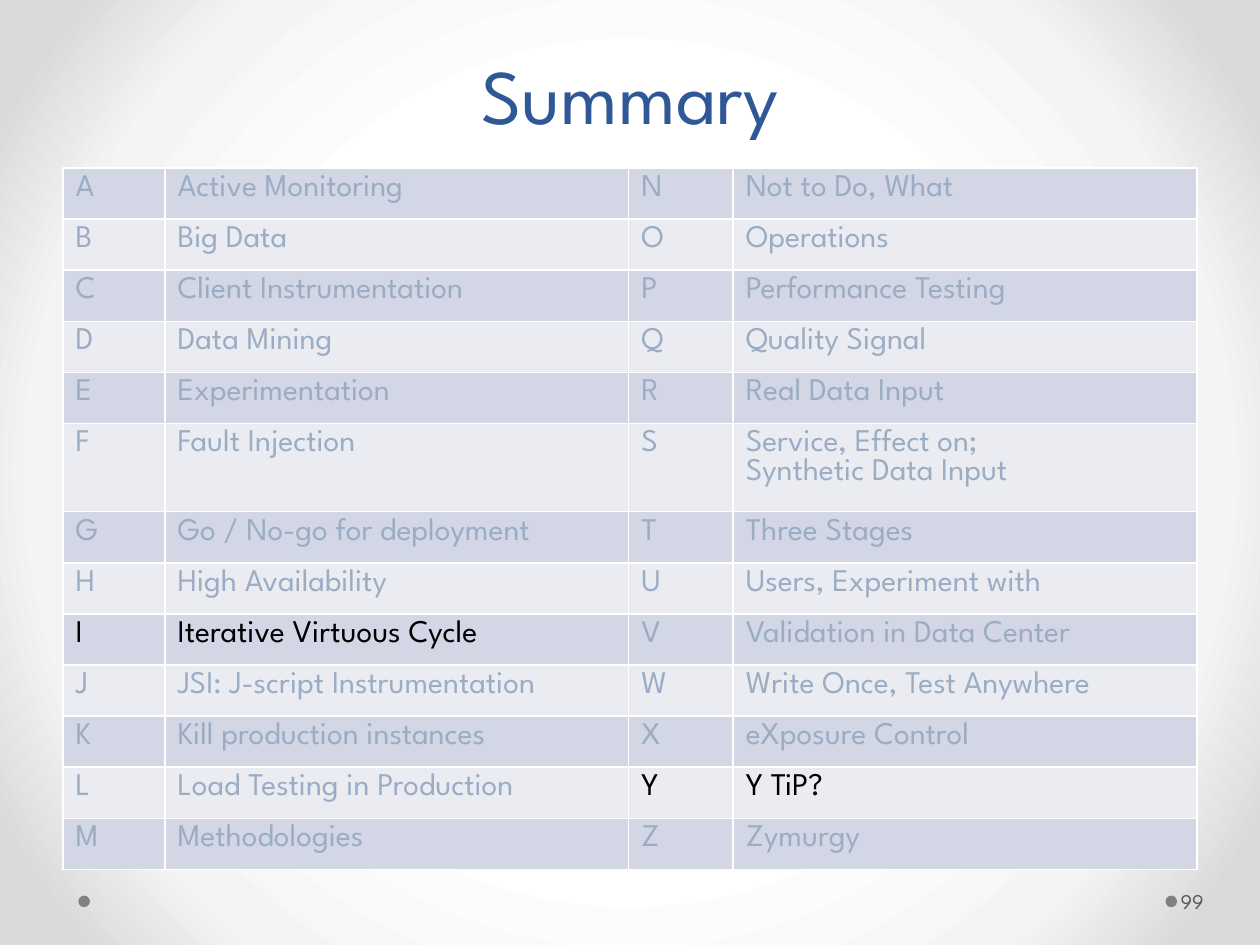
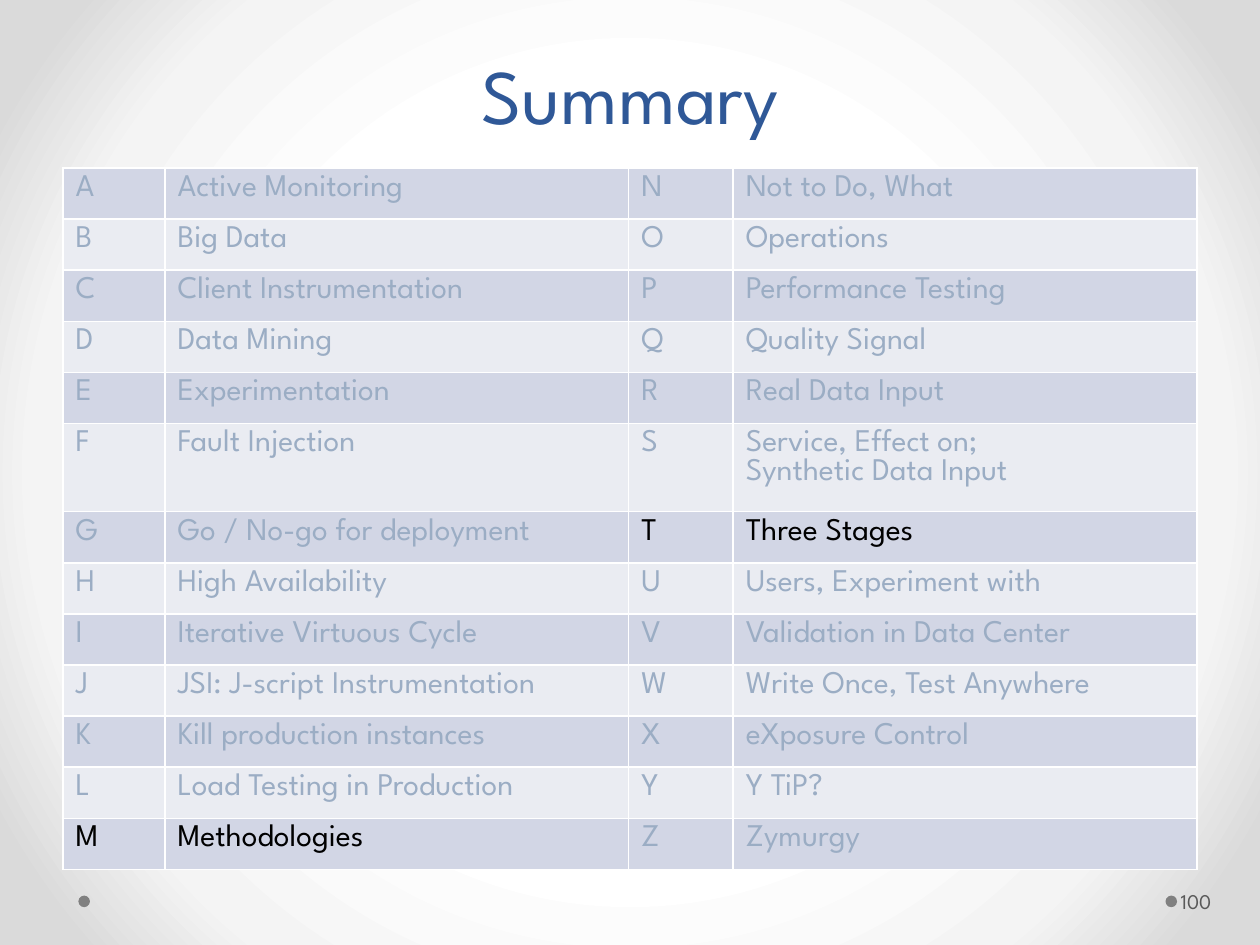
from lxml import etree
from pptx import Presentation
from pptx.dml.color import RGBColor
from pptx.enum import shapes, text
from pptx.oxml.ns import qn
from pptx.util import Pt

FONT = "League Spartan"
TITLE_BLUE = RGBColor(0x2F, 0x58, 0x97)
MUTED_BLUE = RGBColor(0x9B, 0xAD, 0xC4)
BLACK = RGBColor(0x00, 0x00, 0x00)
WHITE = RGBColor(0xFF, 0xFF, 0xFF)
PALE_GRAY = RGBColor(0xF4, 0xF4, 0xF4)
EDGE_GRAY = RGBColor(0xDA, 0xDA, 0xDA)
DOT_GRAY = RGBColor(0x80, 0x80, 0x80)
NUMBER_GRAY = RGBColor(0x59, 0x59, 0x59)
ROW_FILLS = (RGBColor(0xD2, 0xD6, 0xE5), RGBColor(0xEA, 0xEC, 0xF2))

BACKGROUND_STOPS = ((50, WHITE), (76, PALE_GRAY), (92, EDGE_GRAY))
COLUMN_WIDTHS = (58.3, 265, 59.7, 265)
ROW_HEIGHT = 29.2
TOPICS = (
    "Active Monitoring",
    "Big Data",
    "Client Instrumentation",
    "Data Mining",
    "Experimentation",
    "Fault Injection",
    "Go / No-go for deployment",
    "High Availability",
    "Iterative Virtuous Cycle",
    "JSI: J-script Instrumentation",
    "Kill production instances",
    "Load Testing in Production",
    "Methodologies",
    "Not to Do, What",
    "Operations",
    "Performance Testing",
    "Quality Signal",
    "Real Data Input",
    "Service, Effect on;\nSynthetic Data Input",
    "Three Stages",
    "Users, Experiment with",
    "Validation in Data Center",
    "Write Once, Test Anywhere",
    "eXposure Control",
    "Y TiP?",
    "Zymurgy",
)
ENTRIES = tuple(zip("ABCDEFGHIJKLMNOPQRSTUVWXYZ", TOPICS))


def add_color(parent, color):
    etree.SubElement(parent, qn("a:srgbClr"), val=str(color))


def write_text(frame, content, size, color, align=None, line_spacing=None):
    """Fill a text frame, with one paragraph for each line of the content."""
    frame.text = content
    for paragraph in frame.paragraphs:
        paragraph.alignment = align
        paragraph.line_spacing = line_spacing
        font = paragraph.runs[0].font
        font.name = FONT
        font.size = Pt(size)
        font.color.rgb = color


def set_radial_background(master):
    master.background.fill.gradient()
    gradient = master.element.find(".//" + qn("p:bg")).find(".//" + qn("a:gradFill"))
    for child in list(gradient):
        gradient.remove(child)
    stops = etree.SubElement(gradient, qn("a:gsLst"))
    for percent, color in BACKGROUND_STOPS:
        add_color(etree.SubElement(stops, qn("a:gs"), pos=str(percent * 1000)), color)
    circle = etree.SubElement(gradient, qn("a:path"), path="circle")
    etree.SubElement(circle, qn("a:fillToRect"), l="50000", t="50000", r="50000", b="50000")


def set_borders(cell, color, width):
    properties = cell._tc.get_or_add_tcPr()
    for side in ("a:lnL", "a:lnR", "a:lnT", "a:lnB"):
        line = etree.SubElement(properties, qn(side), w=str(Pt(width)))
        add_color(etree.SubElement(line, qn("a:solidFill")), color)


class SummaryDeck:
    """Holds the shared style and the slide being built."""

    def __init__(self):
        self.presentation = Presentation()
        self.presentation.slide_width = Pt(720)
        self.presentation.slide_height = Pt(540)
        set_radial_background(self.presentation.slide_master)
        self.slide = None

    def start_slide(self):
        self.slide = self.presentation.slides.add_slide(self.presentation.slide_layouts[6])

    def add_dot(self, left):
        dot = self.slide.shapes.add_shape(
            shapes.MSO_SHAPE.OVAL, Pt(left), Pt(511.8), Pt(6.6), Pt(6.6))
        dot.shadow.inherit = False
        dot.fill.solid()
        dot.fill.fore_color.rgb = DOT_GRAY
        dot.line.fill.background()

    def add_text_box(self, left, top, width, height, content, anchor, margins, **style):
        frame = self.slide.shapes.add_textbox(Pt(left), Pt(top), Pt(width), Pt(height)).text_frame
        frame.word_wrap = True
        frame.vertical_anchor = anchor
        frame.margin_left, frame.margin_top, frame.margin_right, frame.margin_bottom = map(Pt, margins)
        write_text(frame, content, **style)

    def add_title(self, title):
        self.add_text_box(
            36, 5.8, 648, 77.8, title, text.MSO_ANCHOR.BOTTOM, (7.2, 3.6, 7.2, 3.6),
            size=44, color=TITLE_BLUE, align=text.PP_ALIGN.CENTER, line_spacing=Pt(58))

    def add_page_number(self, number):
        self.add_text_box(
            672.5, 500.4, 43.9, 28.8, str(number), text.MSO_ANCHOR.MIDDLE, (2.2, 3.6, 3.6, 3.6),
            size=12, color=NUMBER_GRAY)

    def add_alphabet_table(self, highlighted):
        """List the letters in two halves, with the highlighted ones in black."""
        row_count = len(ENTRIES) // 2
        table = self.slide.shapes.add_table(
            row_count, len(COLUMN_WIDTHS), Pt(36), Pt(96),
            Pt(sum(COLUMN_WIDTHS)), Pt(row_count * ROW_HEIGHT)).table
        table.first_row = table.horz_banding = False
        for column, width in zip(table.columns, COLUMN_WIDTHS):
            column.width = Pt(width)
        for row in table.rows:
            row.height = Pt(ROW_HEIGHT)
        for index, entry in enumerate(ENTRIES):
            half, row = divmod(index, row_count)
            color = BLACK if entry[0] in highlighted else MUTED_BLUE
            for offset, content in enumerate(entry):
                cell = table.cell(row, 2 * half + offset)
                set_borders(cell, WHITE, 1)
                cell.fill.solid()
                cell.fill.fore_color.rgb = ROW_FILLS[row % 2]
                write_text(cell.text_frame, content, size=18, color=color)

    def add_summary(self, number, highlighted):
        self.start_slide()
        for left in (666, 44.8):
            self.add_dot(left)
        self.add_title("Summary")
        self.add_alphabet_table(highlighted)
        self.add_page_number(number)


def main():
    deck = SummaryDeck()
    deck.add_summary(99, highlighted="IY")
    deck.add_summary(100, highlighted="MT")
    deck.presentation.save("out.pptx")


if __name__ == "__main__":
    main()
